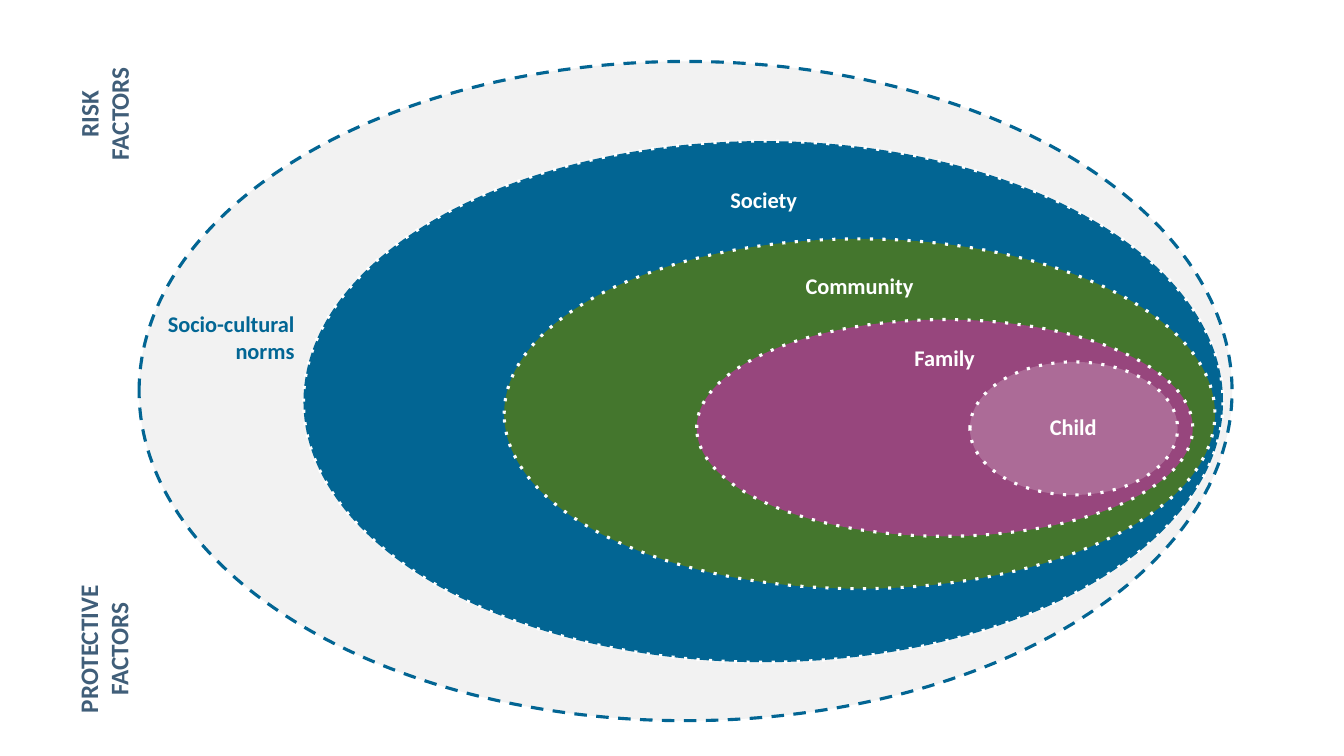
from dataclasses import dataclass

from pptx import Presentation
from pptx.dml.color import RGBColor
from pptx.enum.dml import MSO_LINE
from pptx.enum.shapes import MSO_SHAPE
from pptx.enum.text import MSO_ANCHOR, PP_ALIGN
from pptx.oxml.ns import qn
from pptx.util import Inches, Pt

ELLIPSE = MSO_SHAPE.OVAL
DASH = MSO_LINE.DASH
TOP, MIDDLE = MSO_ANCHOR.TOP, MSO_ANCHOR.MIDDLE
CENTER, RIGHT = PP_ALIGN.CENTER, PP_ALIGN.RIGHT

FONT = "Calibri"
COLORS = {
    "white": "FFFFFF",
    "norms": "F2F2F2",
    "society": "026593",
    "community": "44762D",
    "family": "97467D",
    "child": "AC6B97",
    "norms_text": "026694",
    "factors": "405E79",
}

Box = tuple[float, float, float, float]


@dataclass
class Ring:
    box: Box
    fill: str
    line: str = "white"
    dash: str = "dot"
    label: str = ""
    label_box: Box | None = None


@dataclass
class SideLabel:
    text: str
    box: Box
    color: str
    size: int
    align: PP_ALIGN
    rotation: int = 0


RINGS = [
    Ring((1.38, 0.61, 10.84, 6.54), "norms", "society", "dash"),
    Ring((3.01, 1.4, 9.12, 5.17), "society",
         label="Society", label_box=(5.61, 1.7, 3.93, 0.59)),
    Ring((5, 2.37, 7.05, 3.47), "community",
         label="Community", label_box=(6.7, 2.61, 3.65, 0.48)),
    Ring((6.91, 3.17, 4.92, 2.15), "family",
         label="Family", label_box=(8.04, 3.37, 2.66, 0.39)),
    Ring((9.62, 3.59, 2.06, 1.32), "child",
         label="Child", label_box=(9.92, 3.92, 1.45, 0.66)),
]

SIDE_LABELS = [
    SideLabel("RISK FACTORS", (0.53, 0.7, 1.16, 0.86), "factors", 18, CENTER, 270),
    SideLabel("PROTECTIVE FACTORS", (0.47, 5.79, 1.71, 1.3), "factors", 18, CENTER, 270),
    SideLabel("Socio-cultural norms", (1.35, 3.03, 1.67, 0.64), "norms_text", 16, RIGHT),
]


def rgb(name: str) -> RGBColor:
    return RGBColor.from_string(COLORS[name])


def add_text(s, text: str, box: Box, *, color: str = "white", size: int = 16,
             align: PP_ALIGN = CENTER, anchor: MSO_ANCHOR = TOP,
             inset: tuple[float, float] = (0.1, 0.05),
             line_spacing: float = 1.0, rotation: int = 0) -> None:
    """Add a wrapped bold label; inset is (horizontal, vertical)."""
    sp = s.shapes.add_textbox(*map(Inches, box))
    sp.rotation = rotation
    tf = sp.text_frame
    tf.word_wrap = True
    tf.vertical_anchor = anchor
    tf.margin_left = tf.margin_right = Inches(inset[0])
    tf.margin_top = tf.margin_bottom = Inches(inset[1])
    p = tf.paragraphs[0]
    p.alignment = align
    p.line_spacing = line_spacing
    r = p.add_run()
    r.text = text
    r.font.name = FONT
    r.font.size = Pt(size)
    r.font.bold = True
    r.font.color.rgb = rgb(color)


def add_ring(s, ring: Ring) -> None:
    sp = s.shapes.add_shape(ELLIPSE, *map(Inches, ring.box))
    sp.shadow.inherit = False
    sp.fill.solid()
    sp.fill.fore_color.rgb = rgb(ring.fill)
    sp.line.color.rgb = rgb(ring.line)
    sp.line.width = Pt(2.25)
    sp.line.dash_style = DASH
    # The preset "dot" has no member in MSO_LINE
    next(sp.element.iter(qn("a:prstDash"))).set("val", ring.dash)
    if ring.label_box:
        add_text(s, ring.label, ring.label_box, anchor=MIDDLE,
                 inset=(0.12, 0.12), line_spacing=0.9)


def main() -> None:
    prs = Presentation()
    prs.slide_width, prs.slide_height = Inches(13.33), Inches(7.5)
    s = prs.slides.add_slide(prs.slide_layouts[6])
    for ring in RINGS:
        add_ring(s, ring)
    for label in SIDE_LABELS:
        add_text(s, label.text, label.box, color=label.color, size=label.size,
                 align=label.align, rotation=label.rotation)
    prs.save("out.pptx")


if __name__ == "__main__":
    main()
